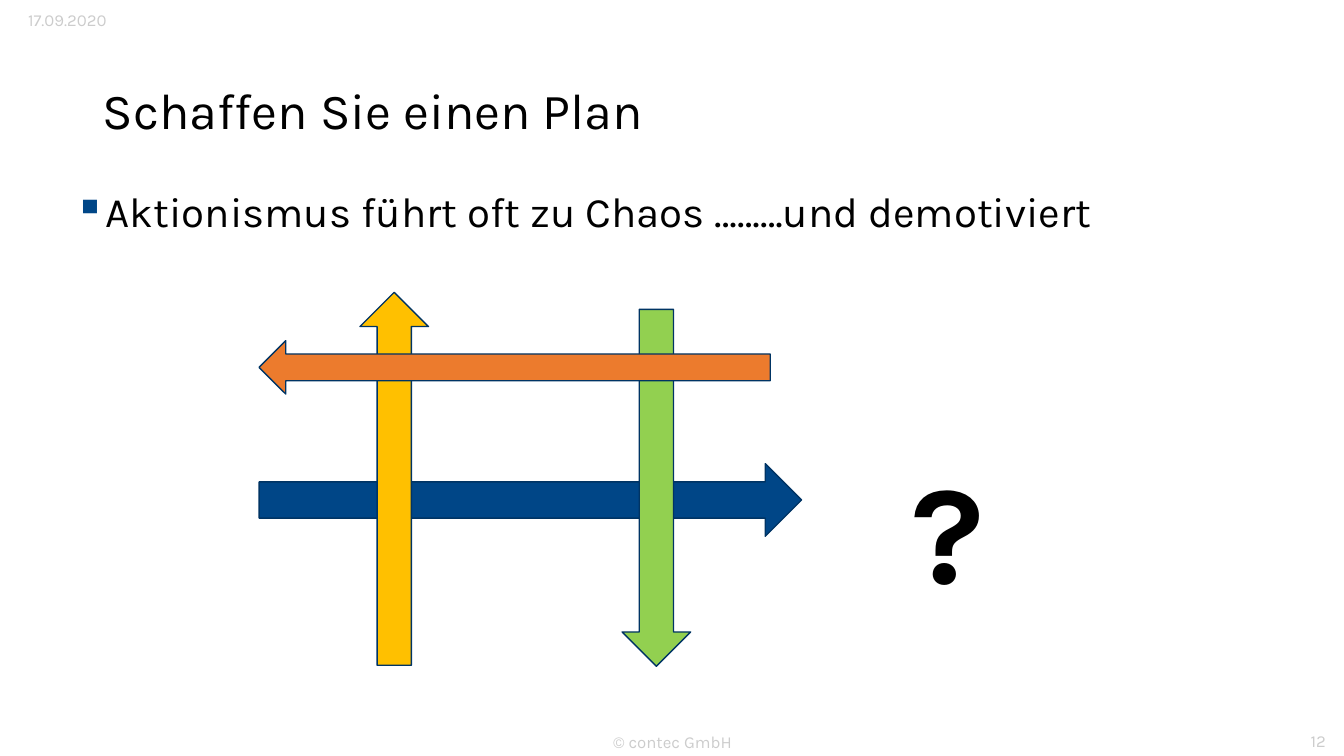
from lxml.etree import SubElement
from pptx import Presentation
from pptx.dml.color import RGBColor
from pptx.enum.shapes import MSO_SHAPE as Shape
from pptx.enum.text import MSO_ANCHOR as Anchor, MSO_AUTO_SIZE as AutoSize, PP_ALIGN as Align
from pptx.oxml.ns import qn
from pptx.util import Inches, Pt

COLS, ROWS = 133.3, 75
CELL = Inches(0.1)
FONT = "Karla"

BLACK = RGBColor(0x00, 0x00, 0x00)
GREY = RGBColor(0xCC, 0xCC, 0xCC)
BLUE = RGBColor(0x00, 0x46, 0x87)
NAVY = RGBColor(0x00, 0x34, 0x64)
GREEN = RGBColor(0x92, 0xD0, 0x50)
YELLOW = RGBColor(0xFF, 0xC0, 0x00)
ORANGE = RGBColor(0xEC, 0x7B, 0x2D)

SMALL = {"size": Pt(12)}

# kind, (column, row, columns wide, rows high), fill; from back to front
ARROWS = [
    (Shape.RIGHT_ARROW, (25.7, 46, 53.8, 7.2), BLUE),
    (Shape.DOWN_ARROW, (61.7, 30.7, 6.8, 35.4), GREEN),
    (Shape.UP_ARROW, (35.7, 29, 6.8, 37), YELLOW),
    (Shape.LEFT_ARROW, (25.7, 33.8, 50.7, 5.3), ORANGE),
]


def cells(*counts):
    """Turn counts of grid cells into lengths."""
    return [round(n * CELL) for n in counts]


def set_all(target, values):
    for name, value in values.items():
        setattr(target, name, value)


def write(sp, text, font, color, align=Align.LEFT, anchor=Anchor.TOP):
    tf = sp.text_frame
    set_all(tf, {"word_wrap": True, "auto_size": AutoSize.NONE, "vertical_anchor": anchor})
    p = tf.paragraphs[0]
    p.alignment = align
    r = p.add_run()
    r.text = text
    set_all(r.font, {"name": FONT, **font})
    r.font.color.rgb = color
    return p


def add_title(s, box, text):
    sp = s.shapes.title
    set_all(sp, dict(zip(("left", "top", "width", "height"), cells(*box))))
    p = write(sp, text, {"size": Pt(36)}, BLACK, anchor=Anchor.MIDDLE)
    p.line_spacing = 0.9


def add_text(s, box, text, font, color=BLACK, **layout):
    return write(s.shapes.add_textbox(*cells(*box)), text, font, color, **layout)


def add_bullet(p, char, color):
    p.line_spacing = 0.9
    pPr = p._p.get_or_add_pPr()
    indent = Inches(0.25)
    pPr.set("marL", str(indent))
    pPr.set("indent", str(-indent))
    bu_color = SubElement(pPr, qn("a:buClr"))
    SubElement(bu_color, qn("a:srgbClr"), val=str(color))
    SubElement(pPr, qn("a:buChar"), char=char)


def add_arrow(s, kind, box, fill):
    sp = s.shapes.add_shape(kind, *cells(*box))
    sp.shadow.inherit = False
    sp.fill.solid()
    sp.fill.fore_color.rgb = fill
    sp.line.color.rgb = NAVY
    sp.line.width = Pt(1)


def main():
    prs = Presentation()
    prs.slide_width, prs.slide_height = cells(COLS, ROWS)
    s = prs.slides.add_slide(prs.slide_layouts[5])

    add_text(s, (1.8, 0.5, 14.8, 3), "17.09.2020", SMALL, GREY)
    add_title(s, (9.2, 4, 115, 14.5), "Schaffen Sie einen Plan")
    p = add_text(s, (6.4, 18.5, 115, 47.6),
                 "Aktionismus führt oft zu Chaos ………und demotiviert", {"size": Pt(30)})
    add_bullet(p, "▪", BLUE)
    add_text(s, (44.2, 71.6, 45, 4), "© contec GmbH", SMALL, GREY,
             align=Align.CENTER, anchor=Anchor.MIDDLE)
    add_text(s, (126.7, 71.5, 5.8, 4), "12", SMALL, GREY,
             align=Align.RIGHT, anchor=Anchor.MIDDLE)
    for arrow in ARROWS:
        add_arrow(s, *arrow)
    add_text(s, (89.4, 43.5, 13.3, 17.8), "?", {"size": Pt(100), "bold": True})

    prs.save("out.pptx")


if __name__ == "__main__":
    main()
